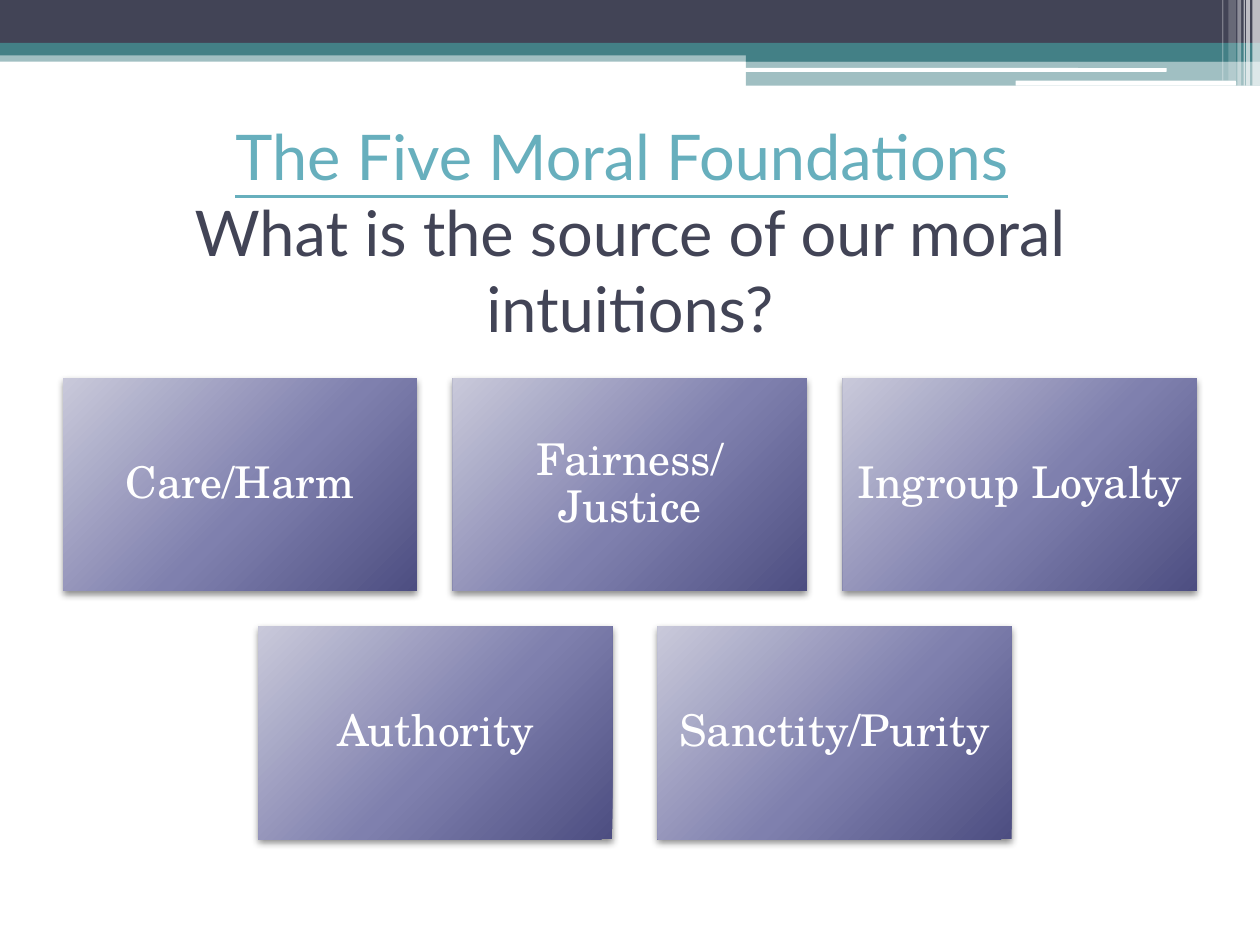
from lxml.etree import SubElement
from pptx import Presentation
from pptx.dml.color import RGBColor
from pptx.enum.shapes import MSO_SHAPE
from pptx.enum.text import MSO_ANCHOR, MSO_AUTO_SIZE, PP_ALIGN
from pptx.oxml import parse_xml
from pptx.oxml.ns import nsdecls, qn
from pptx.util import Inches, Pt

COLORS = {
    "navy": "424456", "teal": "438086", "white": "FFFFFF", "link": "67AFBD",
    "box_light": "C9C9DA", "box_mid": "7F80AE", "box_dark": "4D4E81",
    "shadow": "000000",
}

prs = Presentation()
prs.slide_width, prs.slide_height = Inches(10), Inches(7.5)
slide = prs.slides.add_slide(prs.slide_layouts[5])


def rgb(name):
    return RGBColor.from_string(COLORS[name])


def add_block(preset, left, top, width, height, color, alpha=100):
    block = slide.shapes.add_shape(
        preset, Inches(left), Inches(top), Inches(width), Inches(height))
    block.shadow.inherit = False
    block.line.fill.background()
    block.fill.solid()
    block.fill.fore_color.rgb = rgb(color)
    if alpha < 100:
        srgb = block.fill._xPr.find(qn("a:solidFill"))[0]
        SubElement(srgb, qn("a:alpha"), val=str(alpha * 1000))
    return block


# Header bands
for left, top, width, height, color, alpha in [
    (0, 0.4, 10, 0.09, "teal", 50),
    (0, 0, 10, 0.34, "navy", 100),
    (0, 0.34, 10, 0.1, "teal", 100),
    (5.92, 0.39, 4.08, 0.1, "teal", 100),
    (5.92, 0.48, 4.08, 0.2, "teal", 50),
]:
    add_block(MSO_SHAPE.RECTANGLE, left, top, width, height, color, alpha)

# White rules across the bands
for left, top, width, height in [(5.91, 0.54, 3.35, 0.03), (8.06, 0.64, 1.75, 0.04)]:
    add_block(MSO_SHAPE.ROUNDED_RECTANGLE, left, top, width, height, "white")

# Translucent stripes in the corner
for left, width, height, alpha in [
    (9.94, 0.06, 0.68, 65), (9.89, 0.03, 0.68, 65), (9.87, 0.01, 0.68, 60),
    (9.82, 0.03, 0.68, 40), (9.75, 0.06, 0.64, 20), (9.7, 0.01, 0.64, 30),
]:
    add_block(MSO_SHAPE.RECTANGLE, left, 0, width, height, "white", alpha)

# Title
title = slide.shapes.title
title.left, title.top = Inches(0.5), Inches(1.25)
title.width, title.height = Inches(9), Inches(1.17)
title.text_frame.auto_size = MSO_AUTO_SIZE.NONE
title.text_frame.vertical_anchor = MSO_ANCHOR.MIDDLE
heading = title.text_frame.paragraphs[0]
heading.alignment = PP_ALIGN.CENTER
heading.font.name, heading.font.size = "Lato", Pt(36)
topic = heading.add_run()
topic.text = "The Five Moral Foundations"
topic.font.underline = True
topic.font.color.rgb = rgb("link")
spacer = heading.add_run()
spacer.text = " "
heading.add_line_break()
question = heading.add_run()
question.text = "What is the source of our moral intuitions?"
for run in (spacer, question):
    run.font.color.rgb = rgb("navy")

# Foundation boxes: three above, two below
BOX_W, BOX_H, GAP = 2.81, 1.69, 0.28
STOPS = [(0, "box_light"), (55, "box_mid"), (100, "box_dark")]
stops_xml = "".join(
    f'<a:gs pos="{pos * 1000}"><a:srgbClr val="{COLORS[name]}"/></a:gs>'
    for pos, name in STOPS)
gradient_xml = (
    f'<a:gradFill {nsdecls("a")} rotWithShape="1"><a:gsLst>{stops_xml}</a:gsLst>'
    '<a:path path="circle"><a:fillToRect l="-40000" t="-90000" r="140000" b="190000"/>'
    '</a:path></a:gradFill>')
shadow_xml = (
    f'<a:outerShdw {nsdecls("a")} blurRad="{Pt(4)}" dist="{Pt(2)}" dir="5400000" '
    f'rotWithShape="0"><a:srgbClr val="{COLORS["shadow"]}"><a:alpha val="45000"/>'
    '</a:srgbClr></a:outerShdw>')

rows = [
    (0.5, 3.095, ["Care/Harm", "Fairness/Justice", "Ingroup Loyalty"]),
    (2.05, 3.17, ["Authority", "Sanctity/Purity"]),
]
for row, (first_left, pitch, foundations) in enumerate(rows):
    for column, foundation in enumerate(foundations):
        box = add_block(
            MSO_SHAPE.RECTANGLE, first_left + column * pitch,
            3 + row * (BOX_H + GAP), BOX_W, BOX_H, "box_mid")
        properties = box.fill._xPr
        properties.replace(properties.find(qn("a:solidFill")), parse_xml(gradient_xml))
        properties.find(qn("a:effectLst")).append(parse_xml(shadow_xml))

        frame = box.text_frame
        frame.word_wrap = True
        frame.vertical_anchor = MSO_ANCHOR.MIDDLE
        frame.margin_left = frame.margin_right = Inches(0.1)
        frame.margin_top = frame.margin_bottom = Inches(0.1)
        label = frame.paragraphs[0]
        label.text = foundation
        label.alignment = PP_ALIGN.CENTER
        label.line_spacing = 0.9
        label.font.name, label.font.size = "TeX Gyre Schola", Pt(25)
        label.font.color.rgb = rgb("white")

prs.save("out.pptx")
